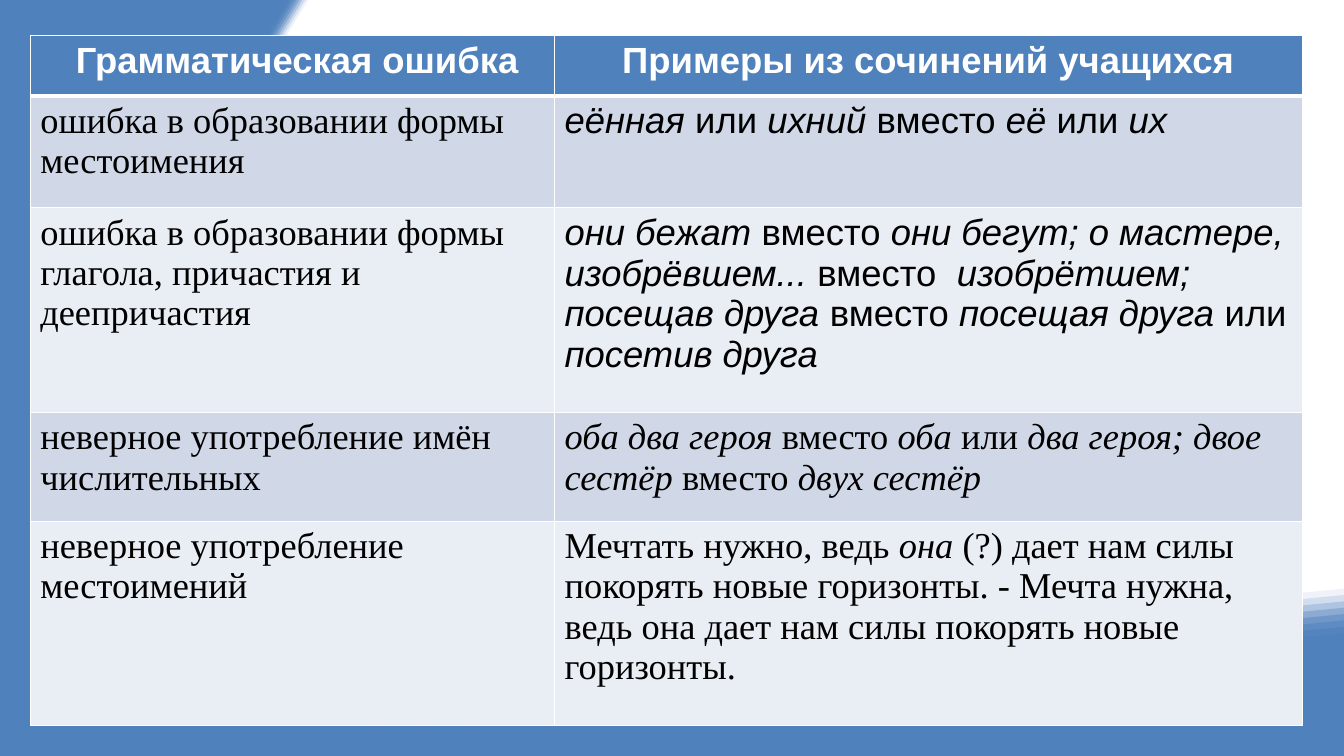
from pptx import Presentation
from pptx.dml.color import RGBColor
from pptx.enum.text import PP_ALIGN
from pptx.oxml import parse_xml
from pptx.oxml.ns import nsdecls, qn
from pptx.util import Inches, Pt

# Text between asterisks is italic; each string in a list is a paragraph.
HEADER = [" Грамматическая ошибка", "Примеры из сочинений учащихся"]
# (error, its font, examples, their font)
ERRORS = [
    (["ошибка в образовании формы местоимения"], "serif",
     ["*еённая *или* ихний *вместо *её* или *их*"], "sans"),
    (["ошибка в образовании формы", "глагола, причастия и деепричастия"], "serif",
     ["*они бежат *вместо* они бегут; о мастере, изобрёвшем... *вместо "
      "* изобрётшем; посещав друга *вместо* посещая друга *или *посетив друга*"], "sans"),
    (["неверное употребление имён числительных"], "serif",
     ["*оба два героя *вместо* оба *или* два героя; двое сестёр *вместо* двух сестёр*"],
     "serif"),
    (["неверное употребление местоимений"], "serif",
     ["Мечтать нужно, ведь *она* (?) дает нам силы покорять новые горизонты. - "
      "Мечта нужна, ведь она дает нам силы покорять новые горизонты."], "serif"),
]

THEME = {
    "blue": "4F81BD", "white": "FFFFFF", "black": "000000",
    "stripes": ["D0D8E8", "E9EDF4"],
    "sans": "Arial", "serif": "Times New Roman",
    "size": 26, "border": 1, "header_border": 3,
}

SLIDE_W, SLIDE_H = 13.33, 7.5
TABLE_LEFT, TABLE_TOP = 0.3, 0.35
COLUMN_WIDTHS = [5.2, 7.42]
ROW_HEIGHTS = [0.6, 1.11, 2.03, 1.08, 2.03]

# Edges of the swoosh as three joined Bézier curves, from right side to top.
SWOOSH_EDGE = [(13.33, 6.56), (13.33, 6.56), (10.75, 6.82), (6.55, 7.14), (1.06, 7.55),
               (-1.62, 7.12), (1.96, 1.15), (2.4, 0.41), (2.65, 0), (2.65, 0)]
FAINTEST_EDGE = [(13.33, 5.84), (13.31, 5.84), (10.85, 6.09), (6.9, 6.38), (1.61, 6.78),
                 (-0.73, 6.32), (2.4, 1.09), (2.81, 0.4), (3.05, 0.01), (3.06, 0)]
SOLID_EDGE = [(13.33, 6.47), (12.99, 6.51), (10.48, 6.75), (6.64, 7.04), (1.22, 7.45),
              (-1.42, 7.03), (2.11, 1.14), (2.48, 0.52), (2.71, 0.11), (2.77, 0)]
BANDS = 11
CURVE_STEPS = 5


def blend(start, end, t):
    return [(x0 + (x1 - x0) * t, y0 + (y1 - y0) * t)
            for (x0, y0), (x1, y1) in zip(start, end)]


def trace(edge):
    """Return points along the joined cubic curves of an edge."""
    points = [edge[0]]
    for first in range(0, len(edge) - 1, 3):
        for step in range(1, CURVE_STEPS + 1):
            curve = edge[first:first + 4]
            while len(curve) > 1:
                curve = blend(curve[:-1], curve[1:], step / CURVE_STEPS)
            points.append(curve[0])
    return points


def add_area(slide, outline, opacity=100):
    corners = [(Inches(x), Inches(y)) for x, y in outline]
    builder = slide.shapes.build_freeform(*corners[0])
    builder.add_line_segments(corners[1:], close=True)
    area = builder.convert_to_shape()
    area.shadow.inherit = False
    area.fill.solid()
    area.fill.fore_color.rgb = RGBColor.from_string(THEME["blue"])
    area.line.fill.background()
    if opacity < 100:
        color = area.element.spPr.find(qn("a:solidFill")).find(qn("a:srgbClr"))
        color.append(parse_xml(f'<a:alpha {nsdecls("a")} val="{opacity * 1000}"/>'))


def add_background(slide):
    swoosh = trace(SWOOSH_EDGE)
    add_area(slide, swoosh + [(0, 0), (0, SLIDE_H), (SLIDE_W, SLIDE_H)])
    for band in range(BANDS):
        edge = blend(FAINTEST_EDGE, SOLID_EDGE, band / (BANDS - 1))
        add_area(slide, trace(edge) + swoosh[::-1], round(100 * (band + 1) / BANDS))


def format_cell(cell, fill, row):
    thick, thin = THEME["header_border"], THEME["border"]
    borders = {"lnL": thin, "lnR": thin,
               "lnT": thick if row == 1 else thin, "lnB": thick if row == 0 else thin}
    properties = cell._tc.get_or_add_tcPr()
    for side, width in borders.items():
        properties.append(parse_xml(
            f'<a:{side} {nsdecls("a")} w="{Pt(width)}"><a:solidFill>'
            f'<a:srgbClr val="{THEME["white"]}"/></a:solidFill></a:{side}>'))
    cell.fill.solid()
    cell.fill.fore_color.rgb = RGBColor.from_string(fill)


def write_cell(cell, paragraphs, font, color, bold=False, align=PP_ALIGN.LEFT):
    frame = cell.text_frame
    for number, content in enumerate(paragraphs):
        paragraph = frame.add_paragraph() if number else frame.paragraphs[0]
        paragraph.alignment = align
        for part, words in enumerate(content.split("*")):
            if not words:
                continue
            run = paragraph.add_run()
            run.text = words
            look = {"name": THEME[font], "size": Pt(THEME["size"]),
                    "bold": bold, "italic": part % 2 == 1}
            for attribute, value in look.items():
                setattr(run.font, attribute, value)
            run.font.color.rgb = RGBColor.from_string(THEME[color])


def add_error_table(slide):
    table = slide.shapes.add_table(
        len(ROW_HEIGHTS), len(COLUMN_WIDTHS), Inches(TABLE_LEFT), Inches(TABLE_TOP),
        Inches(sum(COLUMN_WIDTHS)), Inches(sum(ROW_HEIGHTS))).table
    for column, width in zip(table.columns, COLUMN_WIDTHS):
        column.width = Inches(width)
    for row, height in zip(table.rows, ROW_HEIGHTS):
        row.height = Inches(height)

    for column, heading in enumerate(HEADER):
        cell = table.cell(0, column)
        format_cell(cell, THEME["blue"], 0)
        write_cell(cell, [heading], "sans", "white", True, PP_ALIGN.CENTER)
    for row, (error, error_font, examples, examples_font) in enumerate(ERRORS, 1):
        columns = [(error, error_font), (examples, examples_font)]
        for column, (paragraphs, font) in enumerate(columns):
            cell = table.cell(row, column)
            format_cell(cell, THEME["stripes"][(row - 1) % 2], row)
            write_cell(cell, paragraphs, font, "black")


def main():
    deck = Presentation()
    deck.slide_width, deck.slide_height = Inches(SLIDE_W), Inches(SLIDE_H)
    slide = deck.slides.add_slide(deck.slide_layouts[6])
    add_background(slide)
    add_error_table(slide)
    deck.save("out.pptx")


if __name__ == "__main__":
    main()
